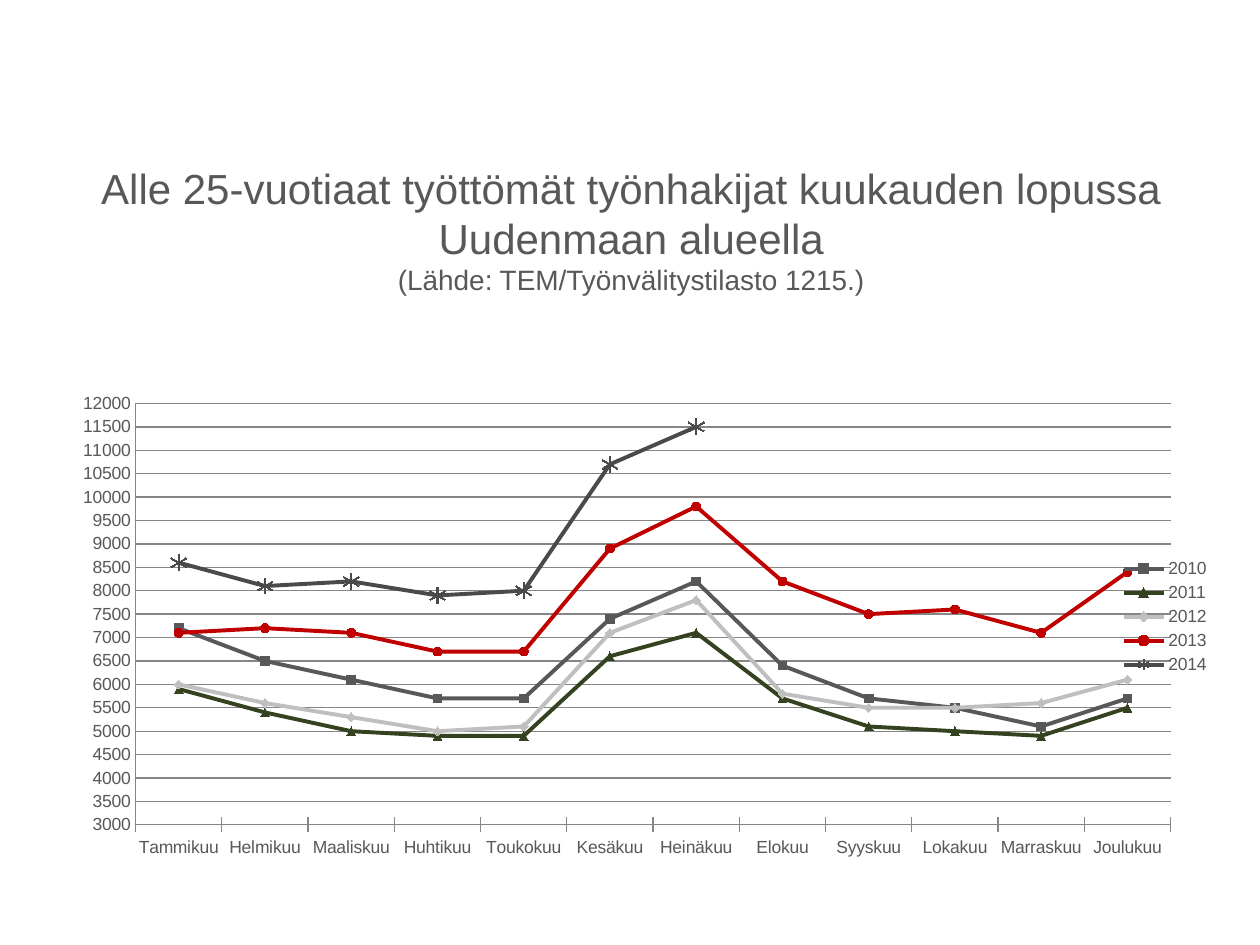
from dataclasses import dataclass

from lxml.etree import SubElement
from pptx import Presentation
from pptx.chart.data import CategoryChartData
from pptx.dml.color import RGBColor
from pptx.enum.chart import (XL_CHART_TYPE, XL_LEGEND_POSITION,
                             XL_MARKER_STYLE, XL_TICK_MARK)
from pptx.enum.text import MSO_ANCHOR, PP_ALIGN
from pptx.oxml.ns import qn
from pptx.util import Inches, Pt


@dataclass(frozen=True)
class Theme:
    font: str = "Arial"
    text: str = "58585A"
    grid: str = "868686"
    title_size: float = 24
    source_size: float = 16
    chart_size: float = 10
    series_width: float = 2.25
    axis_width: float = 0.75


THEME = Theme()

MONTHS = ["Tammikuu", "Helmikuu", "Maaliskuu", "Huhtikuu", "Toukokuu", "Kesäkuu",
          "Heinäkuu", "Elokuu", "Syyskuu", "Lokakuu", "Marraskuu", "Joulukuu"]

# Year, colour, marker, marker size, job seekers by month
YEARS = [
    ("2010", "58585A", XL_MARKER_STYLE.SQUARE, 5,
     [7200, 6500, 6100, 5700, 5700, 7400, 8200, 6400, 5700, 5500, 5100, 5700]),
    ("2011", "354220", XL_MARKER_STYLE.TRIANGLE, 5,
     [5900, 5400, 5000, 4900, 4900, 6600, 7100, 5700, 5100, 5000, 4900, 5500]),
    ("2012", "BFBFBF", XL_MARKER_STYLE.DIAMOND, 5,
     [6000, 5600, 5300, 5000, 5100, 7100, 7800, 5800, 5500, 5500, 5600, 6100]),
    ("2013", "C00000", XL_MARKER_STYLE.CIRCLE, 5,
     [7100, 7200, 7100, 6700, 6700, 8900, 9800, 8200, 7500, 7600, 7100, 8400]),
    ("2014", "4A4A4C", XL_MARKER_STYLE.STAR, 9,
     [8600, 8100, 8200, 7900, 8000, 10700, 11500] + [None] * 5),
]


def set_font(font, size):
    font.name = THEME.font
    font.size = Pt(size)
    font.color.rgb = RGBColor.from_string(THEME.text)


def set_line(line, color, width):
    line.color.rgb = RGBColor.from_string(color)
    line.width = Pt(width)


def place(parent, index, left, top, width, height, inner=False):
    """Give a chart part a fixed place, in fractions of the chart."""
    for old in parent.findall(qn("c:layout")):
        parent.remove(old)
    layout = SubElement(parent, qn("c:layout"))
    parent.insert(index, layout)
    manual = SubElement(layout, qn("c:manualLayout"))
    settings = [("layoutTarget", "inner")] if inner else []
    settings += [("xMode", "edge"), ("yMode", "edge"),
                 ("x", left), ("y", top), ("w", width), ("h", height)]
    for name, value in settings:
        SubElement(manual, qn(f"c:{name}")).set("val", str(value))


def add_title(page, title, source):
    box = page.shapes.add_textbox(Inches(0.51), Inches(1.47), Inches(9), Inches(0.7))
    frame = box.text_frame
    frame.word_wrap = True
    frame.vertical_anchor = MSO_ANCHOR.MIDDLE
    para = frame.paragraphs[0]
    para.alignment = PP_ALIGN.CENTER
    span = para.add_run()
    span.text = title
    set_font(span.font, THEME.title_size)
    para.add_line_break()
    span = para.add_run()
    span.text = source
    set_font(span.font, THEME.source_size)


def style_axes(chart):
    values, months = chart.value_axis, chart.category_axis
    values.minimum_scale, values.maximum_scale = 3000, 12000
    values.major_unit = 500
    values.has_major_gridlines = True
    values.major_tick_mark = XL_TICK_MARK.NONE
    months.major_tick_mark = XL_TICK_MARK.CROSS
    for line in (values.major_gridlines.format.line, values.format.line,
                 months.format.line):
        set_line(line, THEME.grid, THEME.axis_width)


def style_series(series, color, marker, size):
    series.smooth = False
    set_line(series.format.line, color, THEME.series_width)
    series.marker.style = marker
    series.marker.size = size
    set_line(series.marker.format.line, color, THEME.axis_width)
    fill = series.marker.format.fill
    if marker == XL_MARKER_STYLE.STAR:
        fill.background()
    else:
        fill.solid()
        fill.fore_color.rgb = RGBColor.from_string(color)


def add_line_chart(page):
    data = CategoryChartData(number_format="General")
    data.categories = MONTHS
    for year, *_, counts in YEARS:
        data.add_series(year, counts)
    chart = page.shapes.add_chart(
        XL_CHART_TYPE.LINE_MARKERS, Inches(-0.98), Inches(2.65),
        Inches(10.71), Inches(4.49), data).chart
    chart.has_title = False
    set_font(chart.font, THEME.chart_size)
    chart.plots[0].vary_by_categories = False
    style_axes(chart)
    for series, (_, color, marker, size, _) in zip(chart.plots[0].series, YEARS):
        style_series(series, color, marker, size)

    # The legend lies over the right end of the plot
    chart.has_legend = True
    chart.legend.position = XL_LEGEND_POSITION.RIGHT
    chart.legend.include_in_layout = False
    plot_area = chart.value_axis._element.getparent()
    place(plot_area, 0, 0.192, 0.123, 0.767, 0.745, inner=True)
    place(chart.legend._element, 1, 0.92, 0.39, 0.07, 0.22)


def main():
    deck = Presentation()
    deck.slide_width, deck.slide_height = Inches(10), Inches(7.5)
    page = deck.slides.add_slide(deck.slide_layouts[6])
    add_title(page,
              "Alle 25-vuotiaat työttömät työnhakijat kuukauden lopussa Uudenmaan alueella",
              "(Lähde: TEM/Työnvälitystilasto 1215.)")
    add_line_chart(page)
    deck.save("out.pptx")


if __name__ == "__main__":
    main()
